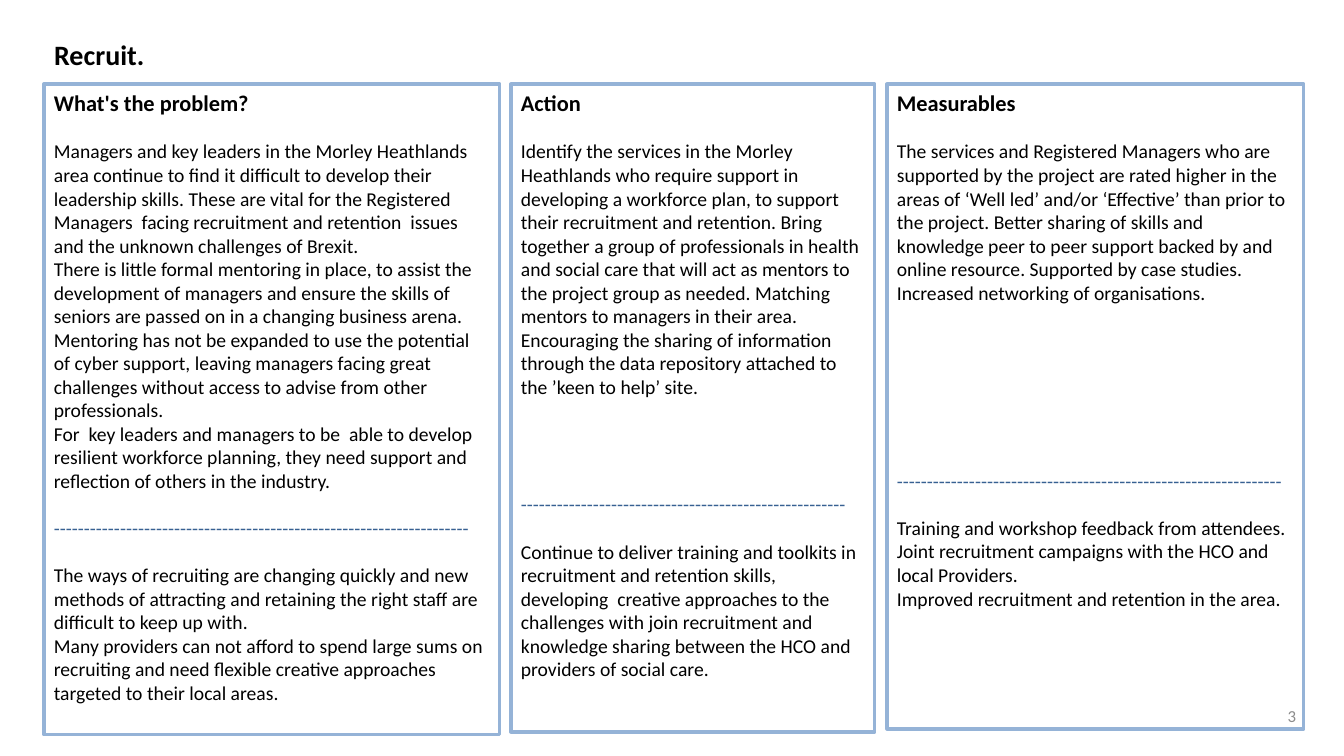
from dataclasses import dataclass

from pptx import Presentation
from pptx.dml.color import RGBColor
from pptx.enum.shapes import MSO_SHAPE
from pptx.enum.text import MSO_ANCHOR, MSO_AUTO_SIZE, PP_ALIGN
from pptx.util import Pt

TITLE = "Recruit."
PAGE_NUMBER = "3"

# Each column: left and size in px, heading, blank lines above the divider,
# dashes in the divider, and the text above and below it
COLUMNS = [
    dict(
        left=44, width=456, height=651, heading="What's the problem?", gap=1, dashes=69,
        above=[
            "Managers and key leaders in the Morley Heathlands area continue to find it difficult to "
            "develop their leadership skills. These are vital for the Registered Managers  facing "
            "recruitment and retention  issues and the unknown challenges of Brexit.",
            "There is little formal mentoring in place, to assist the development of managers and "
            "ensure the skills of seniors are passed on in a changing business arena.",
            "Mentoring has not be expanded to use the potential of cyber support, leaving managers "
            "facing great challenges without access to advise from other professionals.",
            "For  key leaders and managers to be  able to develop resilient workforce planning, they "
            "need support and reflection of others in the industry.",
        ],
        below=[
            "The ways of recruiting are changing quickly and new methods of attracting and retaining "
            "the right staff are difficult to keep up with.",
            "Many providers can not afford to spend large sums on recruiting and need flexible "
            "creative approaches targeted to their local areas.",
        ],
    ),
    dict(
        left=511, width=364, height=648, heading="Action", gap=4, dashes=54,
        above=[
            "Identify the services in the Morley Heathlands who require support in developing a "
            "workforce plan, to support their recruitment and retention. Bring together a group of "
            "professionals in health and social care that will act as mentors to the project group "
            "as needed. Matching mentors to managers in their area. Encouraging the sharing of "
            "information through the data repository attached to the ’keen to help’ site.",
        ],
        below=[
            "Continue to deliver training and toolkits in recruitment and retention skills, "
            "developing  creative approaches to the challenges with join recruitment and knowledge "
            "sharing between the HCO and providers of social care.",
        ],
    ),
    dict(
        left=887, width=417, height=645, heading="Measurables", gap=7, dashes=64,
        above=[
            "The services and Registered Managers who are supported by the project are rated higher "
            "in the areas of ‘Well led’ and/or ‘Effective’ than prior to the project. Better sharing "
            "of skills and knowledge peer to peer support backed by and online resource. Supported "
            "by case studies. Increased networking of organisations.",
        ],
        below=[
            "Training and workshop feedback from attendees.",
            "Joint recruitment campaigns with the HCO and local Providers.",
            "Improved recruitment and retention in the area.",
        ],
    ),
]
COLUMN_TOP = 84
TITLE_BOX = (44, 32, 1167, 44)
NUMBER_BOX = (1118, 696, 188, 40)


@dataclass(frozen=True)
class Theme:
    font: str = "Calibri"
    text: RGBColor = RGBColor(0, 0, 0)
    divider: RGBColor = RGBColor(0x37, 0x60, 0x92)
    border: RGBColor = RGBColor(0x95, 0xB3, 0xD7)
    number: RGBColor = RGBColor(0x8C, 0x8C, 0x8C)
    title_size: int = 20
    heading_size: int = 16
    body_size: int = 14
    number_size: int = 12
    body_line: float = 16.8
    border_width: float = 2.25


THEME = Theme()
EMU_PER_PX = 914400 / 100.8


def px(*lengths):
    return [round(n * EMU_PER_PX) for n in lengths]


def write(p, text, size, color=THEME.text, bold=False, align=PP_ALIGN.LEFT, lines_before=0):
    p.text = text
    p.alignment = align
    p.space_before = Pt(lines_before * THEME.body_line)
    p.font.name = THEME.font
    p.font.size = Pt(size)
    p.font.bold = bold
    p.font.color.rgb = color


def set_frame(tf, anchor):
    tf.word_wrap = True
    tf.auto_size = MSO_AUTO_SIZE.NONE
    tf.vertical_anchor = anchor


def add_column(slide, column):
    box = px(column["left"], COLUMN_TOP, column["width"], column["height"])
    sp = slide.shapes.add_shape(MSO_SHAPE.RECTANGLE, *box)
    sp.shadow.inherit = False
    sp.fill.background()
    sp.line.color.rgb = THEME.border
    sp.line.width = Pt(THEME.border_width)
    tf = sp.text_frame
    set_frame(tf, MSO_ANCHOR.TOP)
    write(tf.paragraphs[0], column["heading"], THEME.heading_size, bold=True)

    def add_block(texts, gap, color=THEME.text):
        for i, text in enumerate(texts):
            write(tf.add_paragraph(), text, THEME.body_size, color,
                  lines_before=0 if i else gap)

    add_block(column["above"], 1)
    add_block(["-" * column["dashes"]], column["gap"], THEME.divider)
    add_block(column["below"], 1)


def main():
    prs = Presentation()
    prs.slide_width, prs.slide_height = px(1344, 756)
    slide = prs.slides.add_slide(prs.slide_layouts[5])

    title = slide.shapes.title
    title.left, title.top, title.width, title.height = px(*TITLE_BOX)
    set_frame(title.text_frame, MSO_ANCHOR.TOP)
    write(title.text_frame.paragraphs[0], TITLE, THEME.title_size, bold=True)

    for column in COLUMNS:
        add_column(slide, column)

    tf = slide.shapes.add_textbox(*px(*NUMBER_BOX)).text_frame
    set_frame(tf, MSO_ANCHOR.MIDDLE)
    write(tf.paragraphs[0], PAGE_NUMBER, THEME.number_size, THEME.number, align=PP_ALIGN.RIGHT)

    prs.save("out.pptx")


if __name__ == "__main__":
    main()
